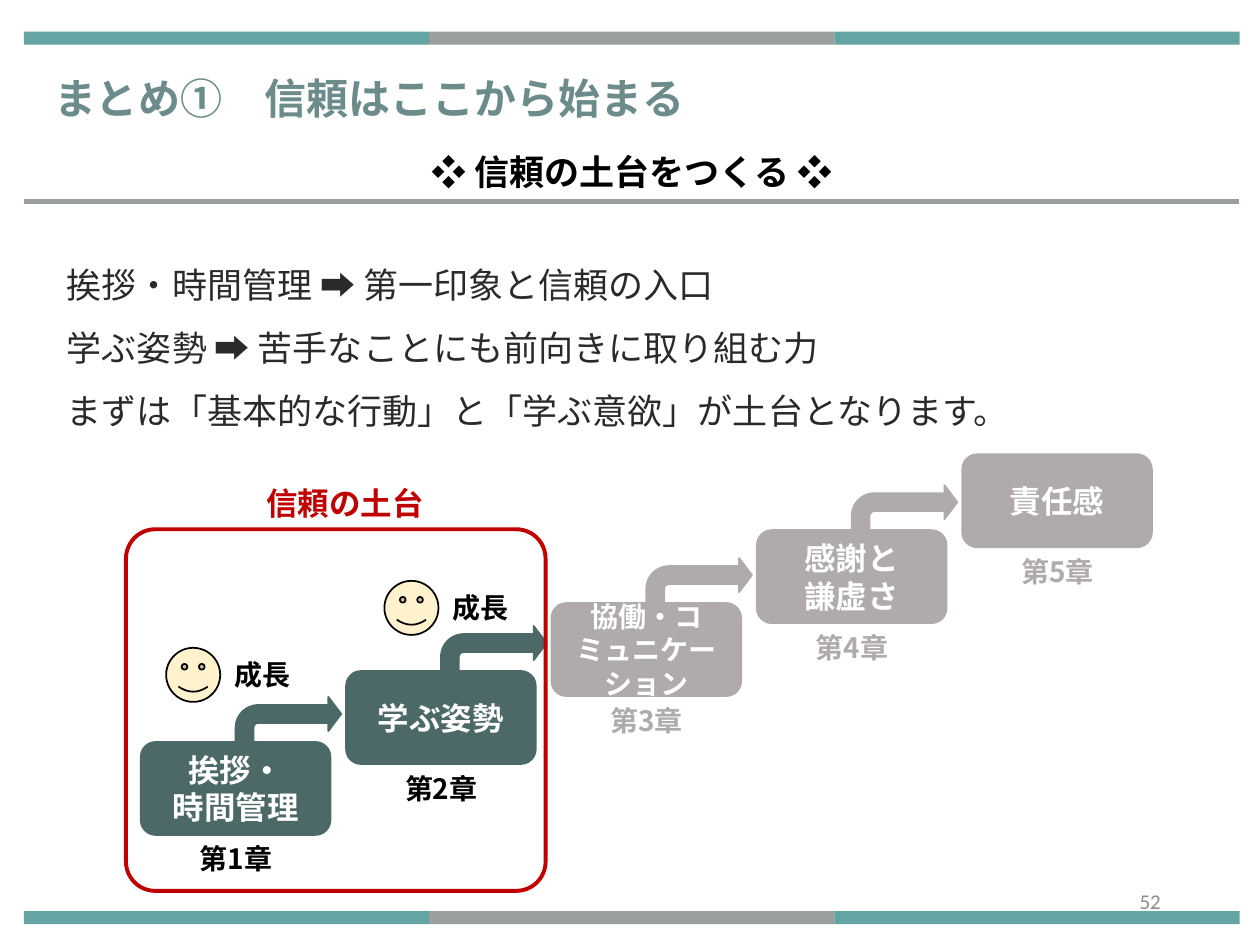
from lxml.etree import SubElement
from pptx import Presentation
from pptx.dml.color import RGBColor
from pptx.enum.shapes import MSO_CONNECTOR as Connector, MSO_SHAPE as Preset
from pptx.enum.text import MSO_ANCHOR as Anchor, PP_ALIGN as Align
from pptx.oxml.ns import qn
from pptx.util import Cm, Pt

JP_FONT = "Noto Sans CJK JP"
TEAL, GREY, DARK, MUTED, RED = "64A4A3", "999F9F", "4C6968", "AFABAB", "C00000"
BLACK, WHITE = "000000", "FFFFFF"
STEP_W, STEP_H, STEP_PITCH = 3.86, 1.91, 4.14
STEPS = [
    ("挨拶・\v時間管理", 14.94, 18, "Calibri"),
    ("学ぶ姿勢", 13.51, 18, JP_FONT),
    ("協働・コミュニケーション", 12.14, 16, JP_FONT),
    ("感謝と\v謙虚さ", 10.67, 18, JP_FONT),
    ("責任感", 9.14, 18, JP_FONT),
]


def color(code):
    """Turn a hex string into a colour."""
    return RGBColor.from_string(code)


def write(frame, text, size, ink, bold=True, align=Align.CENTER, spacing=None, font=JP_FONT):
    """Fill a text frame and format its paragraphs and runs."""
    frame.word_wrap = True
    frame.text = text
    for paragraph in frame.paragraphs:
        paragraph.alignment = align
        paragraph.line_spacing = spacing
        for run in paragraph.runs:
            run.font.name = font
            run.font.size = Pt(size)
            run.font.bold = bold
            run.font.color.rgb = color(ink)
            SubElement(run.font._element, qn("a:ea"), typeface=JP_FONT)


def add_label(slide, box, text, size, ink, inset=True, **style):
    """Add a text box, with or without inner margins."""
    frame = slide.shapes.add_textbox(*map(Cm, box)).text_frame
    if not inset:
        frame.margin_left = frame.margin_right = frame.margin_top = frame.margin_bottom = 0
    write(frame, text, size, ink, **style)
    return frame


def add_figure(slide, preset, box, fill=None, line=None, width=1, adjust=()):
    """Add a preset shape with flat fill and line."""
    figure = slide.shapes.add_shape(preset, *map(Cm, box))
    figure.shadow.inherit = False
    for index, value in enumerate(adjust):
        figure.adjustments[index] = value
    if fill:
        figure.fill.solid()
        figure.fill.fore_color.rgb = color(fill)
    else:
        figure.fill.background()
    if line:
        figure.line.color.rgb = color(line)
        figure.line.width = Pt(width)
    else:
        figure.line.fill.background()
    return figure


def add_band(slide, top):
    """Add a three-part colour band across the slide."""
    for index, fill in enumerate((TEAL, GREY, TEAL)):
        add_figure(slide, Preset.RECTANGLE, (0.48 + 8.17 * index, top, 8.17, 0.26), fill)


def add_rule(slide):
    """Add the line under the heading."""
    rule = slide.shapes.add_connector(Connector.STRAIGHT, Cm(0.48), Cm(4.06), Cm(24.97), Cm(4.06))
    rule.line.color.rgb = color(GREY)
    rule.line.width = Pt(3)
    SubElement(rule._element.spPr, qn("a:effectLst"))


def add_step(slide, index, text, top, size, font):
    """Add one stair step with its chapter label and the arrow to the next."""
    left = 2.82 + STEP_PITCH * index
    fill, ink = (DARK, BLACK) if index < 2 else (MUTED, MUTED)
    step = add_figure(slide, Preset.ROUNDED_RECTANGLE, (left, top, STEP_W, STEP_H), fill)
    step.text_frame.vertical_anchor = Anchor.MIDDLE
    write(step.text_frame, text, size, WHITE, font=font)
    add_label(slide, (left + 0.74, top + STEP_H, 2.39, 0.94), f"第{index + 1}章", 16, ink)
    if index < len(STEPS) - 1:
        add_figure(slide, Preset.BENT_ARROW, (left + 1.93, top - 0.89, 2.13, 1.04),
                   fill, fill, adjust=(0.347, 0.331, 0.25, 0.438))


def add_growth(slide, left, top):
    """Add a smiling face with the growth label beside it."""
    add_figure(slide, Preset.SMILEY_FACE, (left, top, 1.09, 1.09), "FFF2CC", BLACK)
    add_label(slide, (left + 0.74, top + 0.08, 2.39, 0.94), "成長", 16, BLACK)


def main():
    """Build the slide and save it."""
    deck = Presentation()
    deck.slide_width, deck.slide_height = Cm(25.4), Cm(19.05)
    slide = deck.slides.add_slide(deck.slide_layouts[6])

    add_band(slide, 0.64)
    add_label(slide, (1.09, 1.09, 21.41, 1.4), "まとめ①　信頼はここから始まる", 24, "6C8C8B",
              inset=False, align=Align.LEFT, spacing=Pt(39.2))
    add_rule(slide)
    add_label(slide, (0.79, 2.49, 23.9, 1.14), "❖ 信頼の土台をつくる ❖", 20, BLACK,
              inset=False, spacing=Pt(39.2))
    page = add_label(slide, (17.93, 17.65, 5.72, 1.02), "52", 12, "8C8C8C",
                     bold=False, align=Align.RIGHT, font="Calibri")
    page.vertical_anchor = Anchor.MIDDLE
    add_band(slide, 18.37)

    points = [
        "挨拶・時間管理 ➡ 第一印象と信頼の入口",
        "学ぶ姿勢 ➡ 苦手なことにも前向きに取り組む力",
        "まずは「基本的な行動」と「学ぶ意欲」が土台となります。",
    ]
    add_label(slide, (1.35, 4.88, 22.76, 3.84), "\n".join(points), 20, "292B2B",
              inset=False, bold=False, align=Align.LEFT, spacing=1.5)

    for index, step in enumerate(STEPS):
        add_step(slide, index, *step)
    add_growth(slide, 3.35, 13.06)
    add_growth(slide, 7.75, 11.71)

    add_figure(slide, Preset.ROUNDED_RECTANGLE, (2.54, 10.67, 8.46, 7.29),
               line=RED, width=2.25, adjust=(0.081,))
    add_label(slide, (4.57, 9.63, 4.78, 1.02), "信頼の土台", 18, RED)

    deck.save("out.pptx")


if __name__ == "__main__":
    main()
